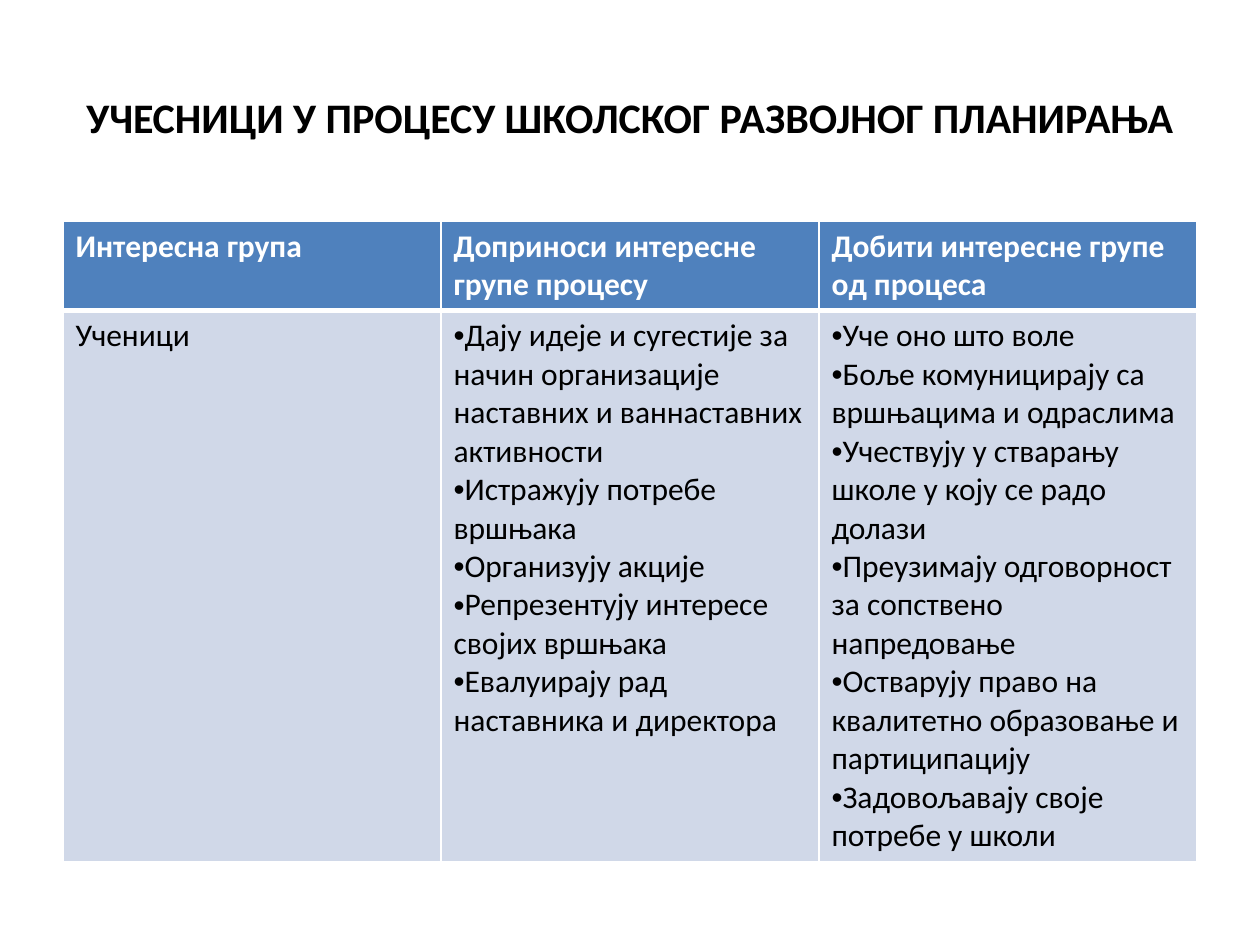
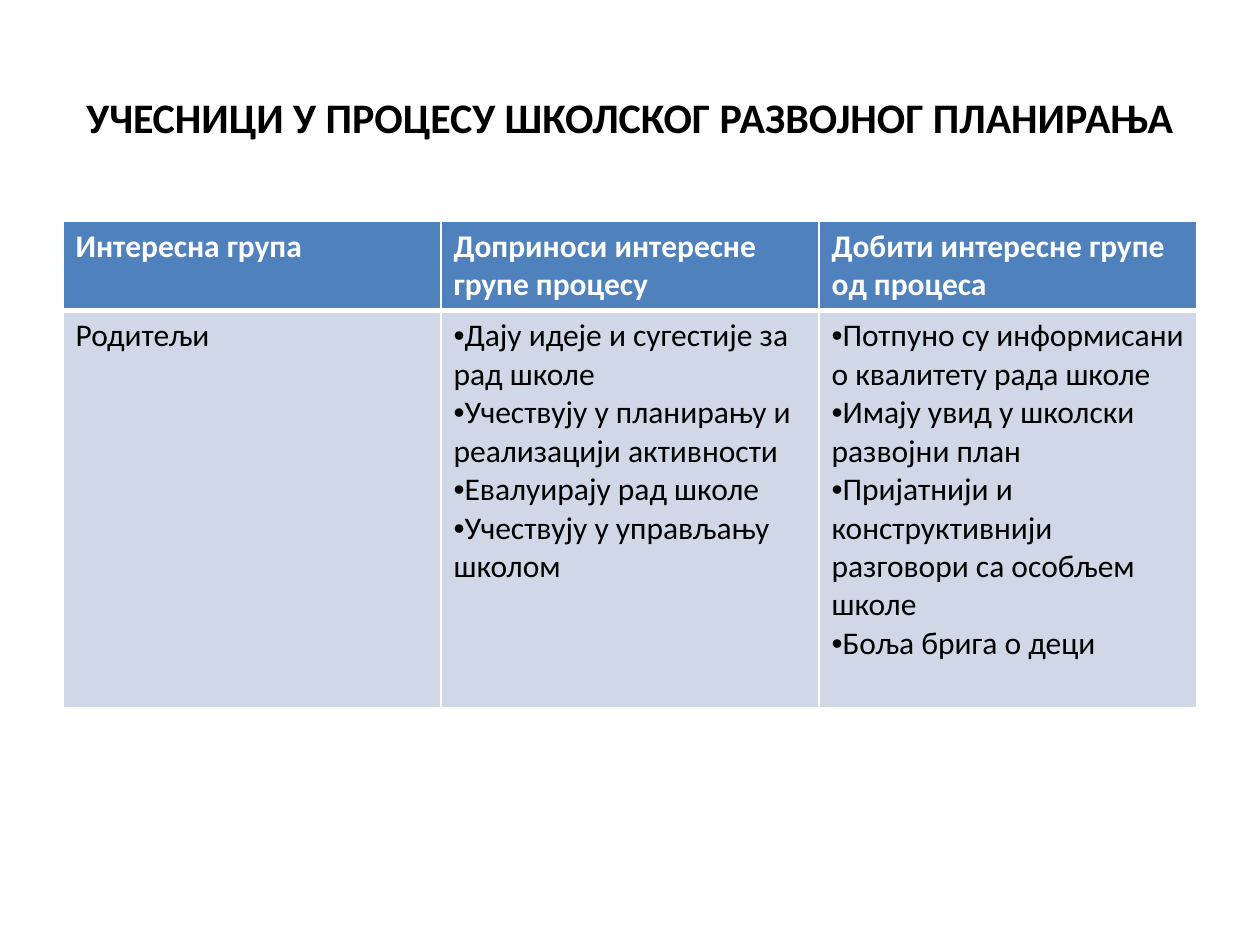
"""Build two slides on the groups that take part in school development planning."""
from lxml import etree
from pptx import Presentation
from pptx.dml.color import RGBColor
from pptx.enum.text import MSO_ANCHOR, PP_ALIGN
from pptx.oxml.ns import qn
from pptx.util import Emu, Pt

CENTER = PP_ALIGN.CENTER
MIDDLE = MSO_ANCHOR.MIDDLE
BLACK = RGBColor(0x00, 0x00, 0x00)
WHITE = RGBColor(0xFF, 0xFF, 0xFF)
BLUE = RGBColor(0x4F, 0x81, 0xBD)
PALE = RGBColor(0xD0, 0xD8, 0xE8)

SCALE = 914400 / 126
WIDTH, HEIGHT = 1260, 945
LEFT, SPAN = 63, 1134
HEAD_H = 88
THIN, THICK = 1, 3

TITLE_FONT = {"name": "Calibri", "size": Pt(24), "bold": True}
HEAD_FONT = {"name": "Calibri", "size": Pt(18), "bold": True}
BODY_FONT = {**HEAD_FONT, "bold": False}

TITLE = "УЧЕСНИЦИ У ПРОЦЕСУ ШКОЛСКОГ РАЗВОЈНОГ ПЛАНИРАЊА"
HEADS = [
    "Интересна група",
    "Доприноси интересне групе процесу",
    "Добити интересне групе од процеса",
]
GROUPS = [
    ("Ученици", 551, [
        "Дају идеје и сугестије за начин организације наставних и ваннаставних активности",
        "Истражују потребе вршњака",
        "Организују акције",
        "Репрезентују интересе својих вршњака",
        "Евалуирају рад наставника и директора",
    ], [
        "Уче оно што воле",
        "Боље комуницирају са вршњацима и одраслима",
        "Учествују у стварању школе у коју се радо долази",
        "Преузимају одговорност за сопствено напредовање",
        "Остварују право на квалитетно образовање и партиципацију",
        "Задовољавају своје потребе у школи",
    ]),
    ("Родитељи", 397, [
        "Дају идеје и сугестије за рад школе",
        "Учествују у планирању и реализацији активности",
        "Евалуирају рад школе",
        "Учествују у управљању школом",
    ], [
        "Потпуно су информисани о квалитету рада школе",
        "Имају увид у школски развојни план",
        "Пријатнији и конструктивнији разговори са особљем школе",
        "Боља брига о деци",
    ]),
]


def px(num):
    return Emu(round(num * SCALE))


class Deck:
    def __init__(self):
        self.prs = Presentation()
        self.prs.slide_width = px(WIDTH)
        self.prs.slide_height = px(HEIGHT)
        self.slide = None

    def add_slide(self):
        self.slide = self.prs.slides.add_slide(self.prs.slide_layouts[5])

    def style(self, para, form, color):
        for key, value in form.items():
            setattr(para.font, key, value)
        para.font.color.rgb = color

    def title(self, text):
        shape = self.slide.shapes.title
        shape.left, shape.top = px(LEFT), px(38)
        shape.width, shape.height = px(SPAN), px(157)
        frame = shape.text_frame
        frame.text = text
        frame.vertical_anchor = MIDDLE
        para = frame.paragraphs[0]
        para.alignment = CENTER
        self.style(para, TITLE_FONT, BLACK)

    def bullet(self, para):
        props = para._p.get_or_add_pPr()
        props.set("marL", "0")
        props.set("indent", "0")
        etree.SubElement(props, qn("a:buFont")).set("typeface", "Arial")
        etree.SubElement(props, qn("a:buChar")).set("char", "•")

    def border(self, cell, top, bottom):
        props = cell._tc.get_or_add_tcPr()
        sides = {"lnL": THIN, "lnR": THIN, "lnT": top, "lnB": bottom}
        for side, width in sides.items():
            line = etree.SubElement(props, qn(f"a:{side}"), w=str(Pt(width)))
            fill = etree.SubElement(line, qn("a:solidFill"))
            etree.SubElement(fill, qn("a:srgbClr"), val=str(WHITE))

    def cell(self, cell, texts, head, listed):
        self.border(cell, THIN if head else THICK, THICK if head else THIN)
        cell.fill.solid()
        cell.fill.fore_color.rgb = BLUE if head else PALE
        cell.text = "\n".join(texts)
        for para in cell.text_frame.paragraphs:
            if listed:
                self.bullet(para)
            self.style(para, HEAD_FONT if head else BODY_FONT, WHITE if head else BLACK)

    def table(self, rows, tall):
        heights = (HEAD_H, tall)
        frame = self.slide.shapes.add_table(
            len(rows), len(HEADS), px(LEFT), px(221), px(SPAN), px(sum(heights)))
        table = frame.table
        table.horz_banding = False
        for col in table.columns:
            col.width = px(SPAN // len(HEADS))
        for r, (texts, height) in enumerate(zip(rows, heights)):
            table.rows[r].height = px(height)
            for c, items in enumerate(texts):
                self.cell(table.cell(r, c), items, r == 0, r > 0 and c > 0)


def main():
    deck = Deck()
    for group, tall, gives, gains in GROUPS:
        deck.add_slide()
        deck.title(TITLE)
        deck.table([[[head] for head in HEADS], [[group], gives, gains]], tall)
    deck.prs.save("out.pptx")


if __name__ == "__main__":
    main()
